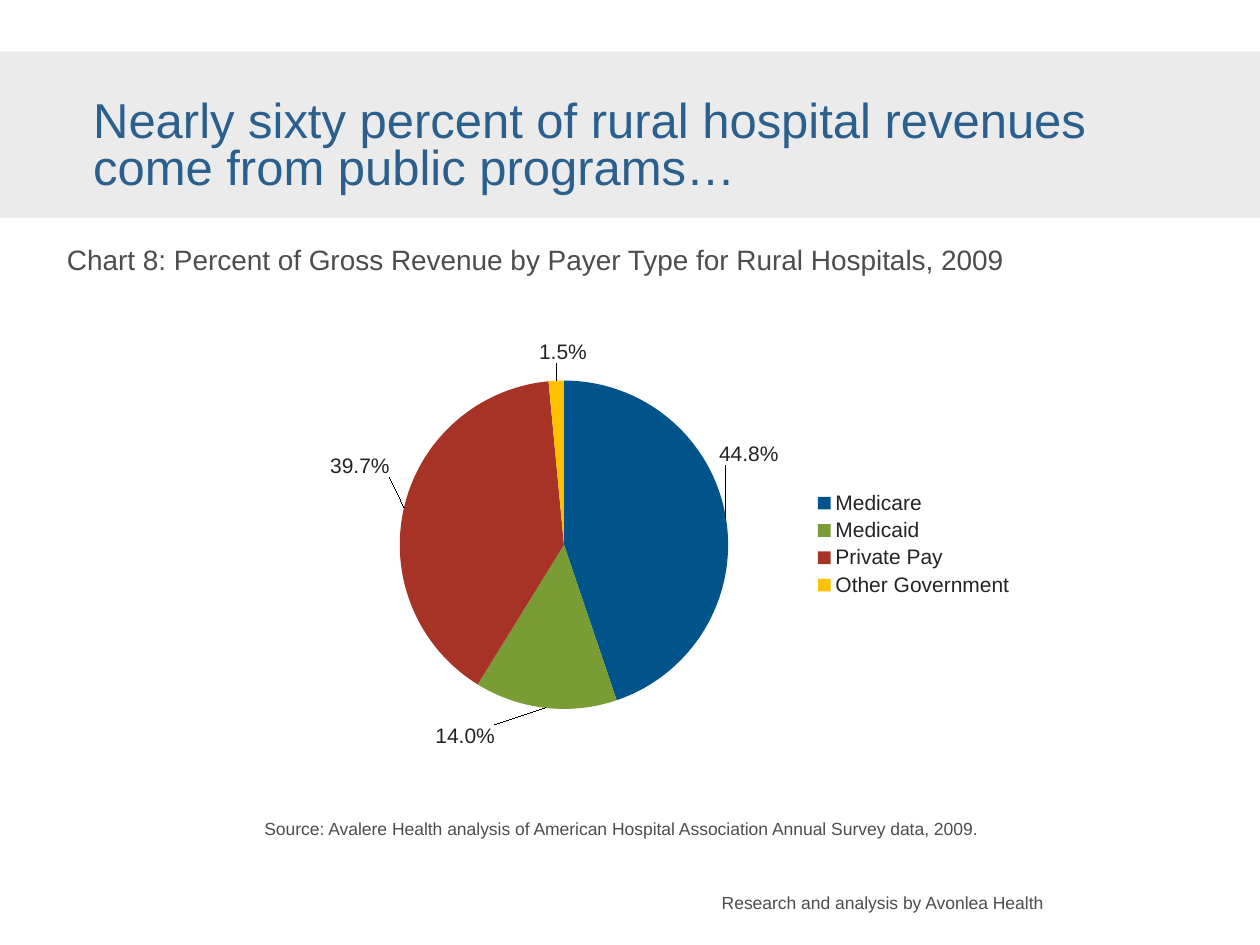
import pptx
import pptx.util
import pptx.chart.data
from pptx.dml.color import RGBColor
from pptx.enum.chart import XL_CHART_TYPE, XL_LABEL_POSITION, XL_LEGEND_POSITION
from pptx.enum.shapes import MSO_SHAPE
from pptx.enum.text import MSO_ANCHOR, MSO_AUTO_SIZE, PP_ALIGN
from pptx.oxml import parse_xml
from pptx.oxml.ns import nsdecls, qn
from pptx.util import Cm, Pt

FONT = "Arial"
GREY, BLUE, BLACK, BAND = "4D4D4D", "2B608E", "232323", "EBEBEB"

CHART_TITLE = "Chart 8: Percent of Gross Revenue by Payer Type for Rural Hospitals, 2009"
# text, box in cm, size, colour, line spacing, inset in cm (sides, top and bottom)
TEXTS = [
    ("Research and analysis by Avonlea Health",
     (14.55, 17.98, 6.9, 0.43), 10, GREY, 1, (0, 0)),
    ("Source: Avalere Health analysis of American Hospital Association Annual Survey data, 2009.",
     (5.08, 16.36, 15.37, 2.03), 10, GREY, 1, (0.25, 0.13)),
    ("Nearly sixty percent of rural hospital revenues come from public programs…",
     (1.88, 2.03, 22.05, 1.91), 28, BLUE, 0.8, (0, 0)),
]
# payer, share, colour, label shift as a fraction of the chart
PAYERS = [
    ("Medicare", 0.448, "00548B", (-0.02, -0.11)),
    ("Medicaid", 0.14, "799D34", (-0.07, 0.02)),
    ("Private Pay", 0.397, "A73226", (-0.01, -0.06)),
    ("Other Government", 0.015, "FFC000", (0.01, -0.02)),
]
PLOT = {"x": 0.116, "y": 0.153, "w": 0.463, "h": 0.697}


def rgb(value):
    return RGBColor.from_string(value)


def style(font, size, color):
    font.name, font.size, font.color.rgb = FONT, Pt(size), rgb(color)


def write(sp, text, box, size, color, spacing, inset):
    sp.left, sp.top, sp.width, sp.height = map(Cm, box)
    tf = sp.text_frame
    tf.word_wrap, tf.auto_size = True, MSO_AUTO_SIZE.NONE
    tf.vertical_anchor = MSO_ANCHOR.TOP
    tf.margin_left = tf.margin_right = Cm(inset[0])
    tf.margin_top = tf.margin_bottom = Cm(inset[1])
    p = tf.paragraphs[0]
    p.alignment, p.line_spacing = PP_ALIGN.LEFT, spacing
    p.space_before = Pt(0)
    r = p.add_run()
    r.text = text
    style(r.font, size, color)


def layout(values, inner=False):
    """Return a manual chart layout element."""
    target = '<c:layoutTarget val="inner"/><c:xMode val="edge"/><c:yMode val="edge"/>'
    parts = "".join(f'<c:{k} val="{v}"/>' for k, v in values.items())
    return parse_xml(f'<c:layout {nsdecls("c")}><c:manualLayout>'
                     f'{target if inner else ""}{parts}</c:manualLayout></c:layout>')


def add_pie(s):
    data = pptx.chart.data.CategoryChartData(number_format="0.0%")
    data.categories = [payer[0] for payer in PAYERS]
    data.add_series("Series 1", [payer[1] for payer in PAYERS])
    chart = s.shapes.add_chart(XL_CHART_TYPE.PIE, Cm(6.4), Cm(6.22),
                               Cm(14.3), Cm(9.5), data).chart
    style(chart.font, 18, BLACK)
    chart.has_title = False
    chart.has_legend = True
    chart.legend.position = XL_LEGEND_POSITION.RIGHT
    chart.legend.include_in_layout = False
    style(chart.legend.font, 12, BLACK)

    plot = chart.plots[0]
    plot.vary_by_categories = True
    area = chart.element.find(".//" + qn("c:plotArea"))
    for old in area.findall(qn("c:layout")):
        area.remove(old)
    area.insert(0, layout(PLOT, inner=True))

    series = plot.series[0]
    labels = series.data_labels
    labels.show_value = True
    labels.number_format, labels.number_format_is_linked = "0.0%", False
    style(labels.font, 12, BLACK)
    for i, (_, _, color, (dx, dy)) in enumerate(PAYERS):
        point = series.points[i]
        point.format.fill.solid()
        point.format.fill.fore_color.rgb = rgb(color)
        label = point.data_label
        style(label.font, 12, BLACK)
        label.position = XL_LABEL_POSITION.OUTSIDE_END
    for item, payer in zip(series.data_labels._element.findall(qn("c:dLbl")), PAYERS):
        item.find(qn("c:idx")).addnext(layout(dict(zip("xy", payer[3]))))


prs = pptx.Presentation()
prs.slide_width, prs.slide_height = Cm(25.4), Cm(19.05)
s = prs.slides.add_slide(prs.slide_layouts[5])

band = s.shapes.add_shape(MSO_SHAPE.RECTANGLE, 0, Cm(1.04), prs.slide_width, Cm(3.35))
band.shadow.inherit = False
band.fill.solid()
band.fill.fore_color.rgb = rgb(BAND)
band.line.fill.background()

write(s.shapes.title, CHART_TITLE, (1.35, 5.03, 21.46, 0.56), 16, GREY, 0.8, (0, 0))
for text, box, *look in TEXTS:
    write(s.shapes.add_textbox(0, 0, 0, 0), text, box, *look)
add_pie(s)

prs.save("out.pptx")
